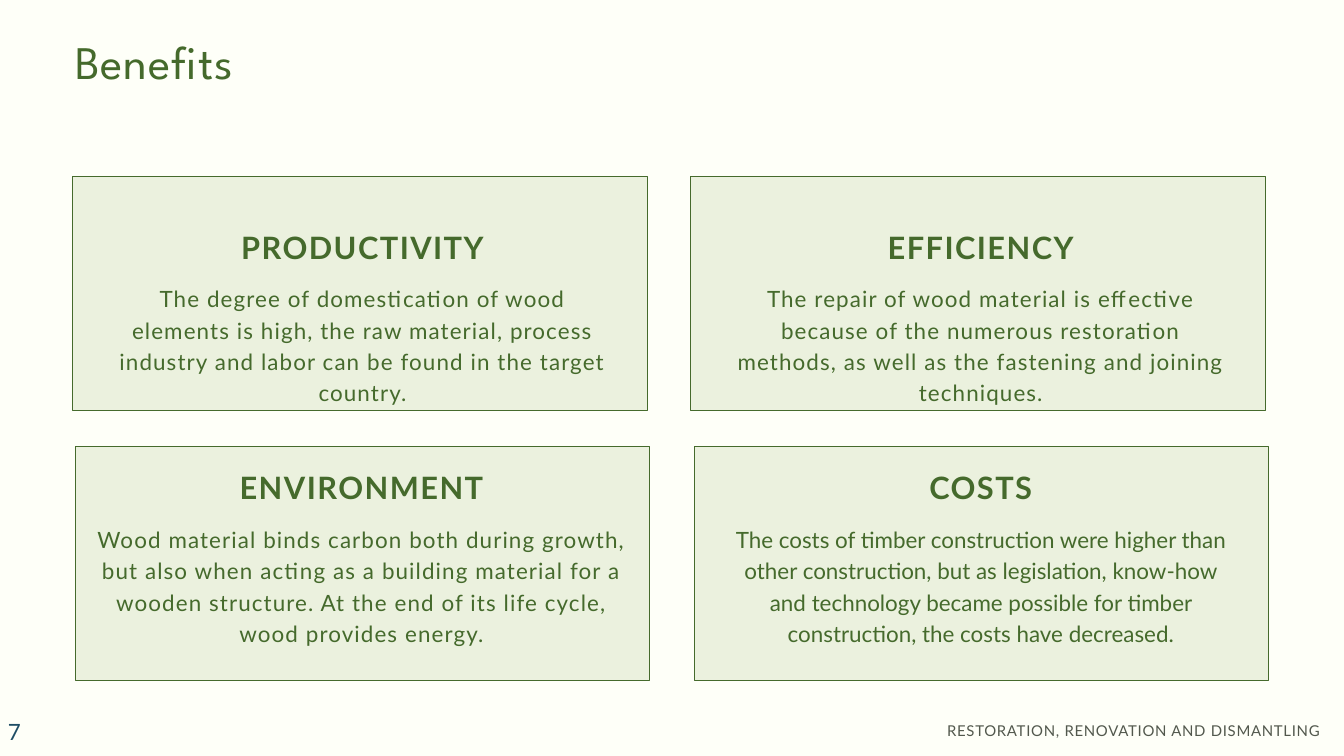
"""Build the Benefits slide: four outlined cards in a two-by-two grid."""
import pptx
import pptx.util
import pptx.dml.color
import pptx.enum.shapes
import pptx.enum.text

Inches, Pt = pptx.util.Inches, pptx.util.Pt
RGBColor = pptx.dml.color.RGBColor
PP_ALIGN = pptx.enum.text.PP_ALIGN
MSO_ANCHOR = pptx.enum.text.MSO_ANCHOR

TITLE = "Benefits"
FOOTER = "RESTORATION, RENOVATION AND DISMANTLING"
PAGE = "7"
CARDS = [
    {"row": 0, "col": 0, "nudge": 0, "text_left": 1.7, "text_w": 7.39, "spc": 1.2,
     "head": "PRODUCTIVITY",
     "body": "The degree of domestication of wood elements is high, the raw material, "
             "process industry and labor can be found in the target country."},
    {"row": 0, "col": 1, "nudge": 0, "text_left": 10.9, "text_w": 7.39, "spc": 1.2,
     "head": "EFFICIENCY",
     "body": "The repair of wood material is effective because of the numerous restoration "
             "methods, as well as the fastening and joining techniques."},
    {"row": 1, "col": 0, "nudge": 0.04, "text_left": 1.42, "text_w": 7.92, "spc": 1.2,
     "head": "ENVIRONMENT",
     "body": "Wood material binds carbon both during growth, but also when acting as a "
             "building material for a wooden structure. At the end of its life cycle, "
             "wood provides energy."},
    {"row": 1, "col": 1, "nudge": 0.05, "text_left": 10.9, "text_w": 7.39, "spc": 0,
     "head": "COSTS",
     "body": "The costs of timber construction were higher than other construction, but as "
             "legislation, know-how and technology became possible for timber construction, "
             "the costs have decreased."},
]

SLIDE_W, SLIDE_H = 20, 11.25
GRID_LEFT, GRID_TOP = 1.08, 2.62
CARD_W, CARD_H = 8.55, 3.48
COL_STEP, ROW_STEP = 9.2, 4.02
HEAD_OFFSETS = (0.76, 0.32)
HEAD_TO_BODY = 0.8

CREAM = RGBColor(0xFE, 0xFF, 0xF8)
PALE_GREEN = RGBColor(0xEB, 0xF1, 0xDE)
GREEN = RGBColor(0x45, 0x6A, 0x2C)
GREY = RGBColor(0x52, 0x58, 0x4D)
BLUE = RGBColor(0x1E, 0x4D, 0x65)


def add_text(shapes, box, text, size, color=GREEN, font="Lato", bold=False,
             spc=0, leading=None, align=PP_ALIGN.LEFT, inset=(0, 0), anchor=MSO_ANCHOR.TOP):
    tf = shapes.add_textbox(*map(Inches, box)).text_frame
    tf.word_wrap = True
    tf.vertical_anchor = anchor
    tf.margin_left = tf.margin_right = Inches(inset[0])
    tf.margin_top = tf.margin_bottom = Inches(inset[1])
    p = tf.paragraphs[0]
    p.alignment = align
    if leading:
        p.line_spacing = Pt(leading)
    r = p.add_run()
    r.text = text
    r.font.name, r.font.size, r.font.bold = font, Pt(size), bold
    r.font.color.rgb = color
    if spc:
        r.font._element.set("spc", str(round(spc * 100)))


def add_card(slide, card):
    left = GRID_LEFT + card["col"] * COL_STEP + card["nudge"]
    top = GRID_TOP + card["row"] * ROW_STEP
    sp = slide.shapes.add_shape(pptx.enum.shapes.MSO_SHAPE.RECTANGLE,
                                *map(Inches, (left, top, CARD_W, CARD_H)))
    sp.shadow.inherit = False
    sp.fill.solid()
    sp.fill.fore_color.rgb = PALE_GREEN
    sp.line.color.rgb = GREEN
    sp.line.width = Pt(0.75)

    group = slide.shapes.add_group_shape().shapes
    x, w = card["text_left"], card["text_w"]
    y = top + HEAD_OFFSETS[card["row"]]
    add_text(group, (x, y, w, 0.56), card["head"], 33, bold=True, spc=1.6,
             leading=41.2, align=PP_ALIGN.CENTER)
    add_text(group, (x, y + HEAD_TO_BODY, w, 1.87), card["body"], 24, spc=card["spc"],
             leading=33.6, align=PP_ALIGN.CENTER)


def main():
    prs = pptx.Presentation()
    prs.slide_width, prs.slide_height = Inches(SLIDE_W), Inches(SLIDE_H)
    slide = prs.slides.add_slide(prs.slide_layouts[6])
    slide.background.fill.solid()
    slide.background.fill.fore_color.rgb = CREAM

    add_text(slide.shapes, (11.33, 10.7, 8.32, 0.29), FOOTER, 16, GREY, spc=0.8,
             leading=22.4, align=PP_ALIGN.RIGHT)
    add_text(slide.shapes, (1.12, 0.39, 17.71, 0.94), TITLE, 50, font="League Spartan",
             spc=1, leading=66.8)
    for card in CARDS:
        add_card(slide, card)
    add_text(slide.shapes, (0.02, 10.69, 2.33, 0.4), PAGE, 24, BLUE, spc=1.2,
             inset=(0.1, 0.05), anchor=MSO_ANCHOR.MIDDLE)
    prs.save("out.pptx")


if __name__ == "__main__":
    main()
